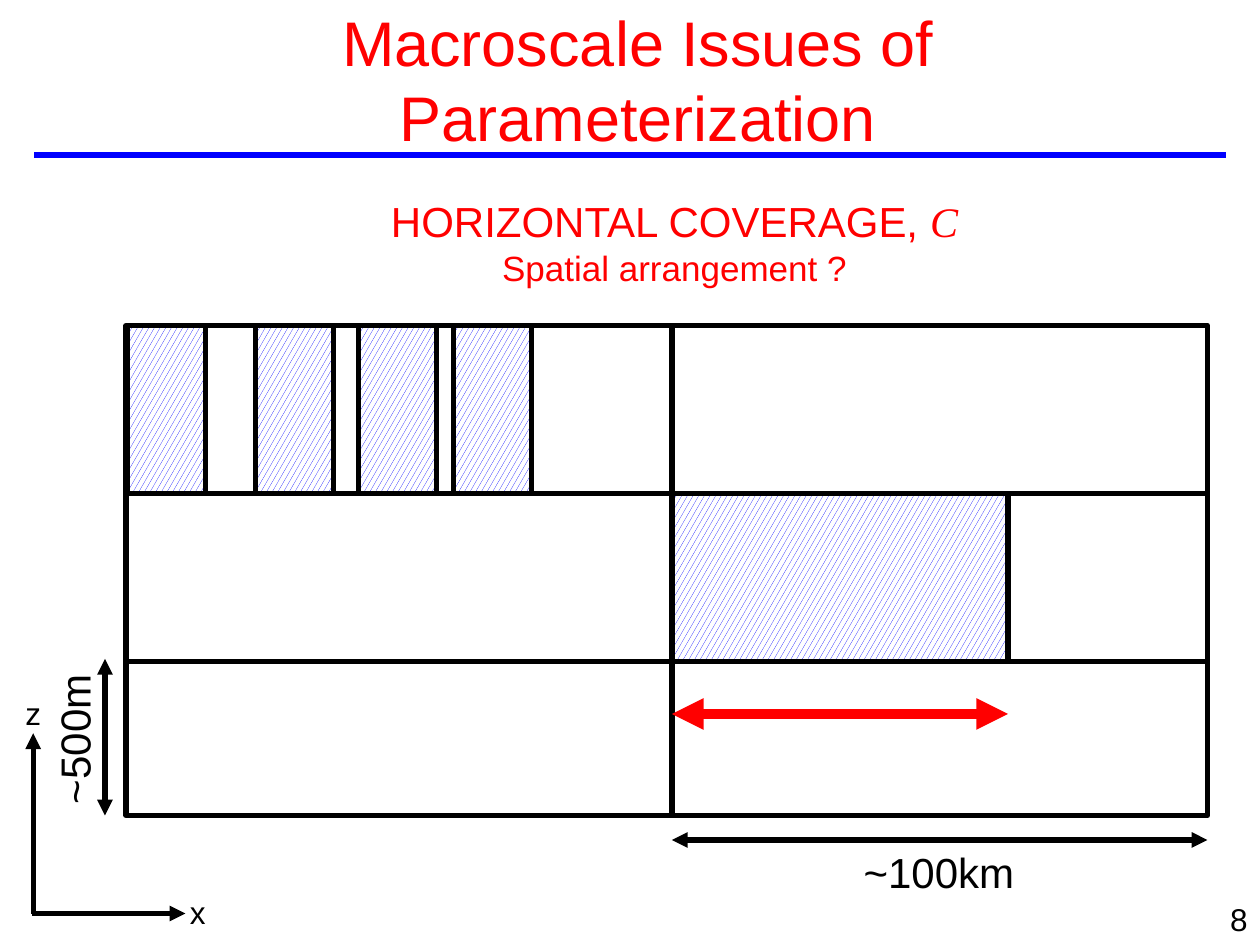
from dataclasses import dataclass

from lxml import etree
from pptx import Presentation
from pptx.dml.color import RGBColor
from pptx.enum.dml import MSO_PATTERN
from pptx.enum.shapes import MSO_CONNECTOR, MSO_SHAPE
from pptx.enum.text import MSO_ANCHOR, MSO_AUTO_SIZE, PP_ALIGN
from pptx.oxml.ns import qn
from pptx.util import Pt

HATCH = MSO_PATTERN.LARGE_CONFETTI
STRAIGHT = MSO_CONNECTOR.STRAIGHT
RECTANGLE = MSO_SHAPE.RECTANGLE
TOP, MIDDLE = MSO_ANCHOR.TOP, MSO_ANCHOR.MIDDLE
FIT_SHAPE, NO_FIT = MSO_AUTO_SIZE.SHAPE_TO_FIT_TEXT, MSO_AUTO_SIZE.NONE
CENTER, RIGHT = PP_ALIGN.CENTER, PP_ALIGN.RIGHT


@dataclass(frozen=True)
class Theme:
    sans: str = "Arial"
    serif: str = "Times New Roman"
    ink: RGBColor = RGBColor(0, 0, 0)
    accent: RGBColor = RGBColor(255, 0, 0)
    blue: RGBColor = RGBColor(0, 0, 255)
    paper: RGBColor = RGBColor(255, 255, 255)
    title: float = 36
    label: float = 24
    subhead: float = 20
    small: float = 18
    stroke: float = 3
    heavy: float = 6


THEME = Theme()


def style_para(para, size, color, align=CENTER):
    para.alignment = align
    para.font.name = THEME.sans
    para.font.size = Pt(size)
    para.font.color.rgb = color


def add_label(page, box, text, size, color=THEME.ink, align=CENTER, anchor=MIDDLE, wrap=False):
    """Place a text box, one paragraph to each line of text."""
    label = page.shapes.add_textbox(*map(Pt, box))
    frame = label.text_frame
    frame.text = text
    frame.word_wrap = wrap
    frame.auto_size = NO_FIT if wrap else FIT_SHAPE
    frame.vertical_anchor = anchor
    for para in frame.paragraphs:
        style_para(para, size, color, align)
    return label


def add_line(page, start, end, color=THEME.ink, width=THEME.stroke, heads=()):
    """Draw a line; heads may hold "headEnd" (start) and "tailEnd" (end)."""
    line = page.shapes.add_connector(STRAIGHT, *map(Pt, (*start, *end)))
    line.line.color.rgb = color
    line.line.width = Pt(width)
    stroke = line.line._get_or_add_ln()
    for head in heads:
        etree.SubElement(stroke, qn(f"a:{head}"), type="triangle")
    etree.SubElement(line._element.spPr, qn("a:effectLst"))


def add_span_arrow(page, start, end, **style):
    add_line(page, start, end, heads=("headEnd", "tailEnd"), **style)


def add_block(page, box, hatched=False):
    block = page.shapes.add_shape(RECTANGLE, *map(Pt, box))
    block.shadow.inherit = False
    if hatched:
        block.fill.patterned()
        block.fill.pattern = HATCH
        block.fill.fore_color.rgb = THEME.blue
        block.fill.back_color.rgb = THEME.paper
    else:
        block.fill.solid()
        block.fill.fore_color.rgb = THEME.paper
    block.line.color.rgb = THEME.ink
    block.line.width = Pt(THEME.stroke)


def add_header(page, box):
    left, top, width, height = box
    title = page.shapes.title
    title.left, title.top, title.width, title.height = map(Pt, (left + 57, top, 576, height))
    frame = title.text_frame
    frame.text = "Macroscale Issues of Parameterization"
    frame.word_wrap = True
    frame.auto_size = NO_FIT
    frame.vertical_anchor = MIDDLE
    style_para(frame.paragraphs[0], THEME.title, THEME.accent)
    rule_y = top + height + 10.5
    add_line(page, (left, rule_y), (left + width, rule_y), THEME.blue)


def add_subhead(page, box):
    label = add_label(page, box, "HORIZONTAL COVERAGE, \nSpatial arrangement ?",
                      THEME.label, THEME.accent)
    heading, question = label.text_frame.paragraphs
    symbol = heading.add_run()
    symbol.text = "C"
    symbol.font.name = THEME.serif
    symbol.font.italic = True
    question.font.size = Pt(THEME.subhead)


def add_model_grid(page, box):
    """Draw the grid boxes, the cloud cover in them and their dimensions."""
    left, top, width, height = box
    right, bottom = left + width, top + height
    row = 96
    middle = left + 312
    cloud_width = 192

    add_block(page, box)
    for level in (1, 2):
        y = top + level * row
        add_line(page, (left, y), (right, y))
    add_line(page, (middle, top), (middle, bottom))

    add_block(page, (middle, top + row, cloud_width, row), hatched=True)
    for offset in (1, 74, 133, 187):
        add_block(page, (left + offset, top, 44.6, row), hatched=True)

    cover_y = top + 222
    add_span_arrow(page, (middle + cloud_width, cover_y), (middle, cover_y),
                   color=THEME.accent, width=THEME.heavy)
    add_span_arrow(page, (right, bottom + 14), (middle, bottom + 14))
    add_label(page, (left + 414, bottom + 14, 101, 36), "~100km", THEME.label)
    add_span_arrow(page, (left - 12, top + 2 * row - 1.5), (left - 12, bottom))
    depth = add_label(page, (left - 74, top + 218.5, 88.5, 36), "~500m", THEME.label)
    depth.rotation = 270


def add_axes(page, box):
    left, top, width, height = box
    bottom = top + height
    add_line(page, (left + 1, bottom), (left + 1, top), heads=["tailEnd"])
    add_line(page, (left, bottom), (left + width, bottom), heads=["tailEnd"])
    for name, x, y in (("x", left + width - 10, bottom - 15), ("z", left - 16, top - 26)):
        add_label(page, (x, y, 34, 29), name, THEME.small, anchor=TOP, wrap=True)


def main():
    deck = Presentation()
    deck.slide_width, deck.slide_height = Pt(720), Pt(540)
    page = deck.slides.add_slide(deck.slide_layouts[5])
    add_header(page, (19.5, 12, 681, 66))
    add_subhead(page, (214, 108, 343, 60.5))
    add_model_grid(page, (72, 186, 618, 280))
    add_axes(page, (18, 419, 88, 103))
    add_label(page, (570, 511, 150, 36), "8", THEME.small, align=RIGHT, anchor=TOP, wrap=True)
    deck.save("out.pptx")


if __name__ == "__main__":
    main()
